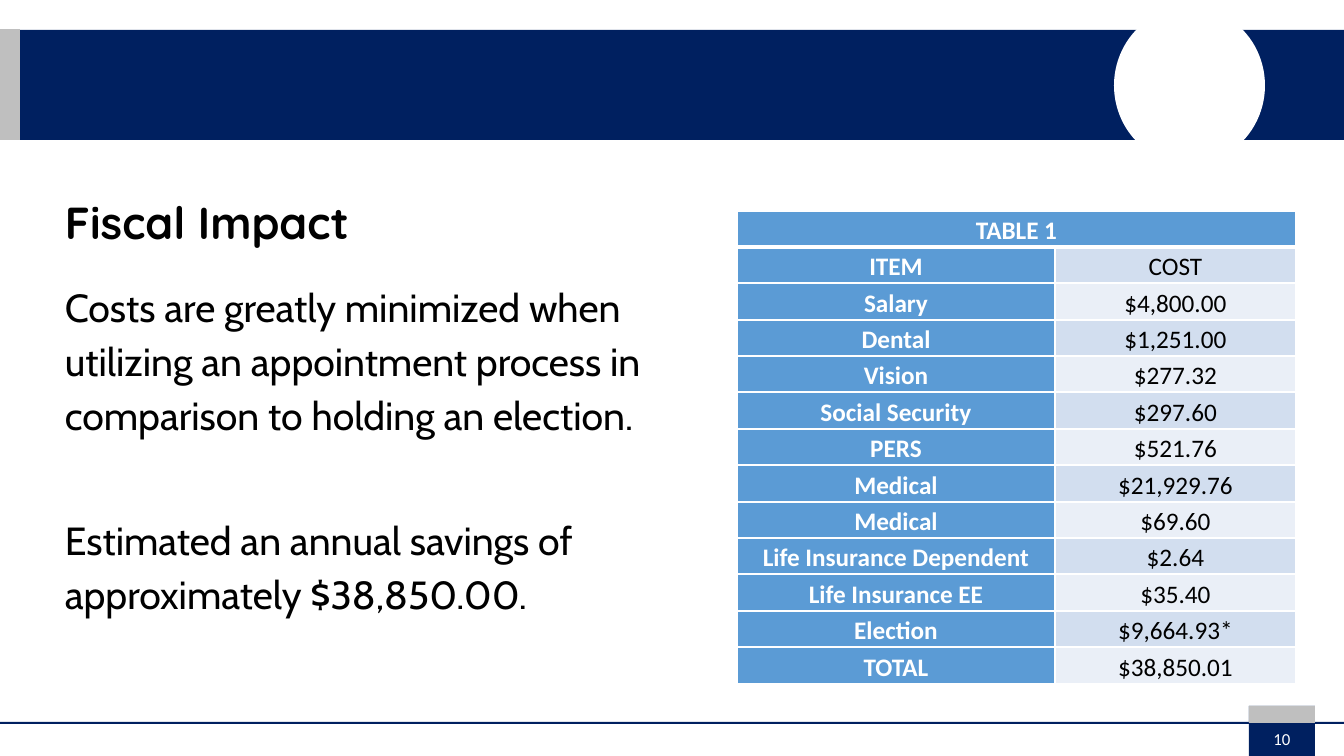
from dataclasses import dataclass

from lxml.etree import SubElement as Sub
from pptx import Presentation
from pptx.dml.color import RGBColor as Rgb
from pptx.enum.shapes import MSO_SHAPE as Kind
from pptx.enum.text import MSO_ANCHOR as Anchor, PP_ALIGN as Align
from pptx.oxml.ns import qn
from pptx.util import Inches, Pt

SCALE = Inches(1) / 100.8


def px(n):
    return round(n * SCALE)


@dataclass(frozen=True)
class Theme:
    navy: str = "002060"
    gray: str = "BFBFBF"
    white: str = "FFFFFF"
    black: str = "000000"
    blue: str = "5B9BD5"
    bands: tuple = ("EAEFF7", "D2DEEF")
    head: tuple = ("Quicksand", 32)
    body: tuple = ("Cabin", 28)
    cell: tuple = ("Calibri", 18)
    page: tuple = ("Calibri", 12)


class Deck:
    def __init__(self, theme):
        self.theme = theme
        self.prs = Presentation()
        self.prs.slide_width, self.prs.slide_height = px(1344), px(756)
        self.slide = self.prs.slides.add_slide(self.prs.slide_layouts[6])

    def shape(self, kind, box, color):
        item = self.slide.shapes.add_shape(kind, *map(px, box))
        item.shadow.inherit = False
        item.fill.solid()
        item.fill.fore_color.rgb = Rgb.from_string(color)
        item.line.fill.background()

    def style(self, para, face, color, bold=False, align=Align.LEFT):
        para.alignment = align
        font = para.font
        font.name, font.size = face[0], Pt(face[1])
        font.bold = bold
        font.color.rgb = Rgb.from_string(color)

    def text(self, box, lines, face, color, anchor=Anchor.TOP, **look):
        frame = self.slide.shapes.add_textbox(*map(px, box)).text_frame
        frame.word_wrap = True
        frame.vertical_anchor = anchor
        frame.text = "\n".join(lines)
        for para in frame.paragraphs:
            self.style(para, face, color, **look)
        return frame.paragraphs

    def border(self, cell, side, width):
        props = cell._tc.get_or_add_tcPr()
        line = Sub(props, qn(f"a:ln{side}"), w=str(Pt(width)))
        fill = Sub(line, qn("a:solidFill"))
        Sub(fill, qn("a:srgbClr"), val=self.theme.white)

    def cell(self, cell, row, col):
        theme = self.theme
        label = row == 0 or col == 0
        cell.margin_left = cell.margin_right = px(7)
        cell.margin_top = cell.margin_bottom = 0
        cell.vertical_anchor = Anchor.MIDDLE
        # Thick rule under the heading row
        for side in "LRTB":
            thick = (row, side) in ((0, "B"), (1, "T"))
            self.border(cell, side, 3 if thick else 1)
        cell.fill.solid()
        color = theme.blue if label else theme.bands[row % 2]
        cell.fill.fore_color.rgb = Rgb.from_string(color)
        para = cell.text_frame.paragraphs[0]
        para.line_spacing = 1.15
        ink = theme.white if label else theme.black
        self.style(para, theme.cell, ink, label, Align.CENTER)

    def table(self, box, widths, rows):
        size = len(rows)
        grid = self.slide.shapes.add_table(size, len(widths), *map(px, box)).table
        for col, width in zip(grid.columns, widths):
            col.width = px(width)
        for r, row in enumerate(rows):
            grid.rows[r].height = px(box[3] * (r + 1) // size - box[3] * r // size)
            for c, value in enumerate(row):
                cell = grid.cell(r, c)
                cell.text = value
                self.cell(cell, r, c)
        grid.cell(0, 0).merge(grid.cell(0, 1))


COSTS = [
    ("TABLE 1", ""),
    ("ITEM", "COST"),
    ("Salary", "$4,800.00"),
    ("Dental", "$1,251.00"),
    ("Vision", "$277.32"),
    ("Social Security", "$297.60"),
    ("PERS", "$521.76"),
    ("Medical", "$21,929.76"),
    ("Medical", "$69.60"),
    ("Life Insurance Dependent", "$2.64"),
    ("Life Insurance EE", "$35.40"),
    ("Election", "$9,664.93*"),
    ("TOTAL", "$38,850.01"),
]
POINTS = [
    "Costs are greatly minimized when utilizing an appointment process "
    "in comparison to holding an election.",
    "Estimated an annual savings of approximately $38,850.00.",
]


def main():
    theme = Theme()
    deck = Deck(theme)

    # Banner and footer
    for kind, box, color in (
        (Kind.RECTANGLE, (0, 30, 1344, 110), theme.navy),
        (Kind.OVAL, (1114, 7, 151, 157), theme.white),
        (Kind.RECTANGLE, (0, 29, 20, 111), theme.gray),
        (Kind.RECTANGLE, (0, 722, 1344, 2), theme.navy),
        (Kind.RECTANGLE, (1249, 706, 66, 50), theme.navy),
        (Kind.RECTANGLE, (1249, 706, 66, 17), theme.gray),
    ):
        deck.shape(kind, box, color)
    deck.text((1237, 719, 90, 40), ["10"], theme.page, theme.white,
              Anchor.MIDDLE, align=Align.CENTER)

    # Heading and message
    deck.text((55, 190, 1226, 92), ["Fiscal Impact"], theme.head, theme.black,
              bold=True)
    points = deck.text((55, 271, 666, 352), POINTS, theme.body, theme.black)
    for para in points:
        para.line_spacing = 1.15
        para.space_after = Pt(6)
    points[1].space_before = Pt(45)

    # Cost table
    deck.table((737, 211, 559, 473), (318, 241), COSTS)

    deck.prs.save("out.pptx")


if __name__ == "__main__":
    main()
